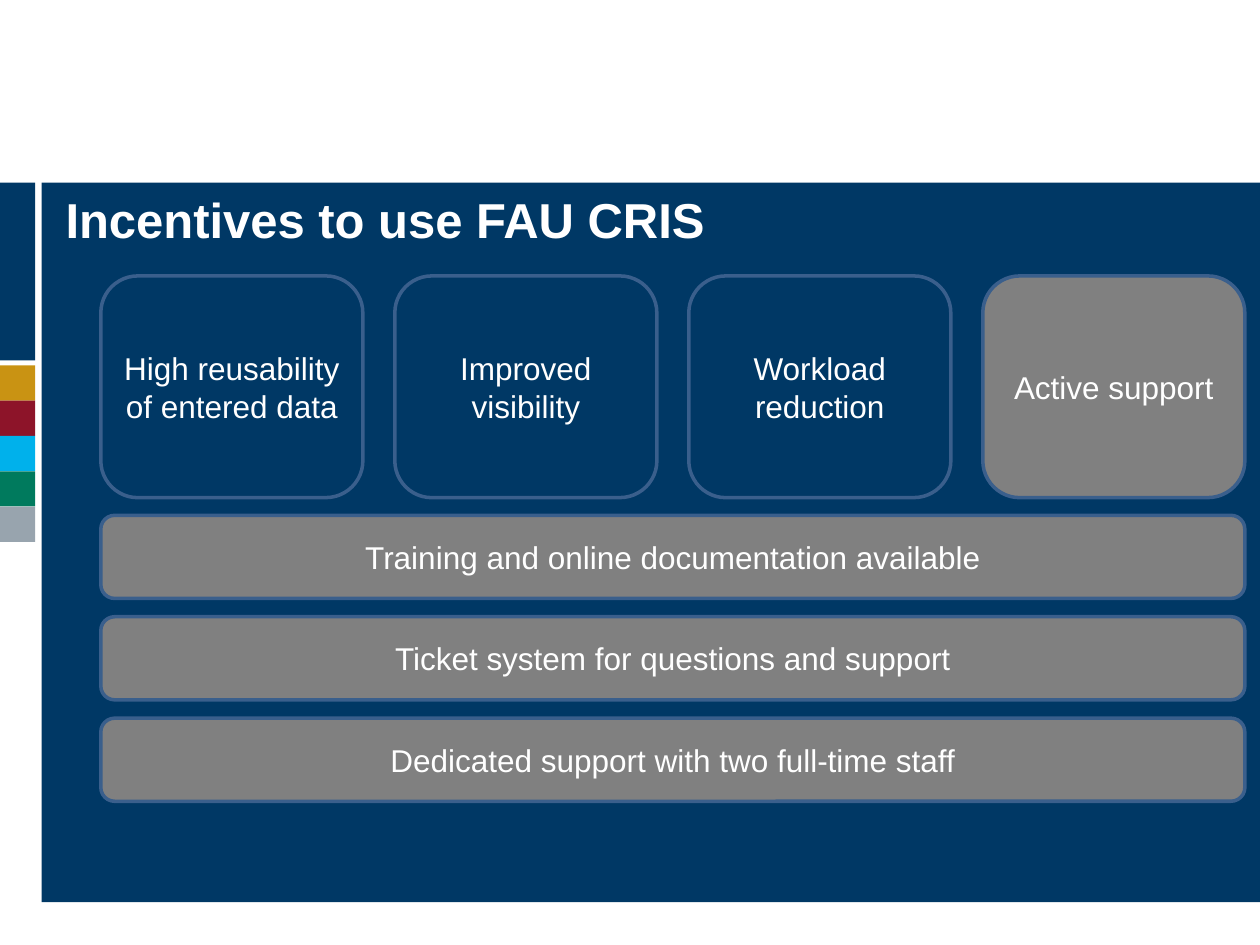
from dataclasses import dataclass

from pptx import Presentation
from pptx.dml.color import RGBColor
from pptx.enum.shapes import MSO_SHAPE as Shape
from pptx.enum.text import MSO_ANCHOR as Anchor, MSO_AUTO_SIZE as AutoSize, PP_ALIGN as Align
from pptx.util import Inches, Pt

COLORS = {
    "navy": "003865", "gold": "C99313", "red": "8D1429", "cyan": "00B1EB",
    "green": "007A5D", "silver": "98A4AE", "gray": "808080",
    "border": "3A5F8C", "white": "FFFFFF",
}
LEFT, WIDTH = 0.8, 9.08
CARD_W, CARD_H, CARD_TOP = 2.08, 1.76, 2.19
BAR_H, BAR_TOP, BAR_STEP = 0.66, 4.09, 0.805
STRIPE_W, STRIPE_TOP, STRIPE_H = 0.28, 2.9, 0.28


@dataclass
class Box:
    """A filled rectangle, measured in inches."""
    left: float
    top: float
    width: float
    height: float
    fill: str
    text: str = ""


def rgb(name: str) -> RGBColor:
    """Return a named palette colour."""
    return RGBColor.from_string(COLORS[name])


def draw_shape(s, box: Box, kind=Shape.RECTANGLE):
    """Draw a flat shape without an outline."""
    sp = s.shapes.add_shape(kind, Inches(box.left), Inches(box.top),
                            Inches(box.width), Inches(box.height))
    sp.shadow.inherit = False
    sp.fill.solid()
    sp.fill.fore_color.rgb = rgb(box.fill)
    sp.line.fill.background()
    return sp


def draw_label(s, box: Box) -> None:
    """Draw an outlined rounded box with centred text."""
    sp = draw_shape(s, box, Shape.ROUNDED_RECTANGLE)
    sp.line.color.rgb = rgb("border")
    sp.line.width = Pt(2)
    tf = sp.text_frame
    tf.word_wrap = True
    tf.vertical_anchor = Anchor.MIDDLE
    p = tf.paragraphs[0]
    p.text = box.text
    p.alignment = Align.CENTER
    p.font.name, p.font.size = "Arial", Pt(18)
    p.font.color.rgb = rgb("white")


def draw_title(s, text: str) -> None:
    """Place the title placeholder in front of the panel."""
    title = s.shapes.title
    title.element.getparent().append(title.element)
    title.left, title.top = Inches(0.52), Inches(1.53)
    title.width, title.height = Inches(9.37), Inches(0.52)
    tf = title.text_frame
    tf.margin_left = tf.margin_top = tf.margin_right = tf.margin_bottom = 0
    tf.auto_size = AutoSize.NONE
    tf.word_wrap = True
    tf.vertical_anchor = Anchor.TOP
    p = tf.paragraphs[0]
    p.text = text
    p.alignment = Align.LEFT
    p.line_spacing = Pt(32)
    p.font.name, p.font.size, p.font.bold = "Arial", Pt(28), True
    p.font.color.rgb = rgb("white")


def main() -> None:
    """Build and save the slide."""
    prs = Presentation()
    prs.slide_width, prs.slide_height = Inches(10), Inches(7.5)
    s = prs.slides.add_slide(prs.slide_layouts[5])

    for i, fill in enumerate(("gold", "red", "cyan", "green", "silver")):
        draw_shape(s, Box(0, STRIPE_TOP + i * STRIPE_H, STRIPE_W, STRIPE_H, fill))
    draw_shape(s, Box(0, 1.45, STRIPE_W, 1.41, "navy"))
    draw_shape(s, Box(0.33, 1.45, 9.67, 5.71, "navy"))
    draw_title(s, "Incentives to use FAU CRIS")

    cards = (
        ("High reusability of entered data", "navy"),
        ("Improved visibility", "navy"),
        ("Workload reduction", "navy"),
        ("Active support", "gray"),
    )
    step = (WIDTH - CARD_W) / (len(cards) - 1)
    for i, (text, fill) in enumerate(cards):
        draw_label(s, Box(LEFT + i * step, CARD_TOP, CARD_W, CARD_H, fill, text))

    bars = (
        "Training and online documentation available",
        "Ticket system for questions and support",
        "Dedicated support with two full-time staff",
    )
    for i, text in enumerate(bars):
        draw_label(s, Box(LEFT, BAR_TOP + i * BAR_STEP, WIDTH, BAR_H, "gray", text))

    prs.save("out.pptx")


if __name__ == "__main__":
    main()
